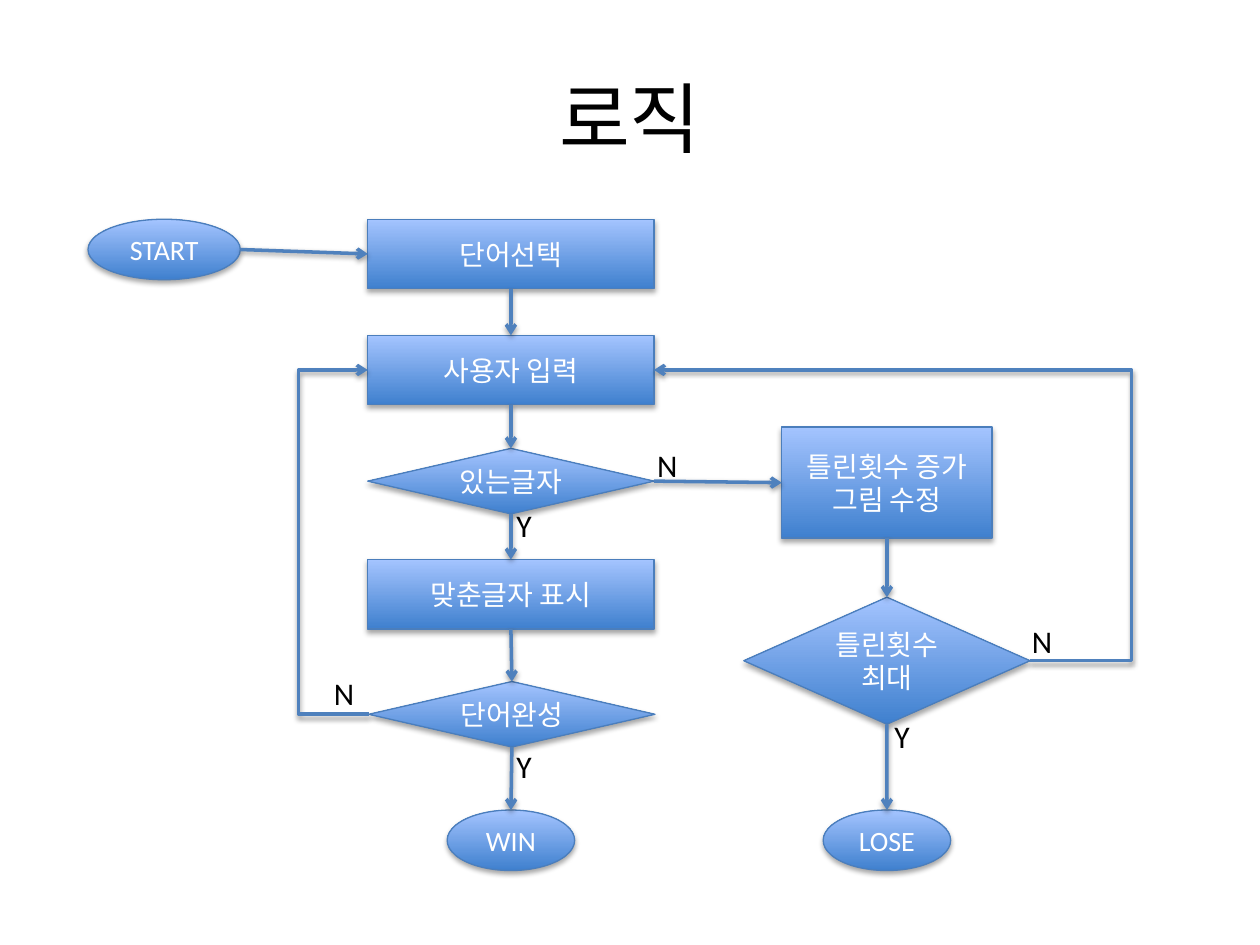
from lxml import etree
from pptx import Presentation
from pptx.dml.color import RGBColor
from pptx.enum.shapes import MSO_CONNECTOR as CONN, MSO_SHAPE as SHAPE
from pptx.enum.text import MSO_ANCHOR as ANCHOR, MSO_AUTO_SIZE as AUTO, PP_ALIGN as ALIGN
from pptx.oxml.ns import qn
from pptx.util import Cm, Pt

COLORS = {
    "text": "000000", "node_text": "FFFFFF", "dark": "3F80CE", "light": "A4C4FF",
    "outline": "4B7EBC", "arrow": "4F81BD", "shadow": "000000",
}
FONT = "Calibri"
TITLE = "로직"

MAIN, SIDE = 10.3, 17.88
TOP, LEFT, BOTTOM, RIGHT = range(4)

# name: shape, centre x, top, width, height, lines
NODES = {
    "pick": (SHAPE.RECTANGLE, MAIN, 4.42, 5.77, 1.4, ["단어선택"]),
    "input": (SHAPE.RECTANGLE, MAIN, 6.76, 5.77, 1.4, ["사용자 입력"]),
    "hit": (SHAPE.DIAMOND, MAIN, 9.04, 5.77, 1.32, ["있는글자"]),
    "miss": (SHAPE.RECTANGLE, SIDE, 8.61, 4.24, 2.24, ["틀린횟수 증가", "그림 수정"]),
    "reveal": (SHAPE.RECTANGLE, MAIN, 11.28, 5.77, 1.4, ["맞춘글자 표시"]),
    "done": (SHAPE.DIAMOND, MAIN + 0.02, 13.74, 5.77, 1.32, ["단어완성"]),
    "win": (SHAPE.OVAL, MAIN, 16.33, 2.57, 1.22, ["WIN"]),
    "max": (SHAPE.DIAMOND, SIDE, 12.04, 5.77, 2.56, ["틀린횟수", "최대"]),
    "lose": (SHAPE.OVAL, SIDE, 16.33, 2.57, 1.22, ["LOSE"]),
    "start": (SHAPE.OVAL, 3.31, 4.42, 3.07, 1.22, ["START"]),
}
ARROWS = [
    ("pick", BOTTOM, "input", TOP),
    ("input", BOTTOM, "hit", TOP),
    ("hit", BOTTOM, "reveal", TOP),
    ("reveal", BOTTOM, "done", TOP),
    ("done", BOTTOM, "win", TOP),
    ("hit", RIGHT, "miss", LEFT),
    ("miss", BOTTOM, "max", TOP),
    ("max", BOTTOM, "lose", TOP),
]
LOOPS = [
    ("done", LEFT, "input", LEFT, 6.02),
    ("max", RIGHT, "input", RIGHT, 22.81),
]
LABELS = [
    ("N", 13.0, 8.86), ("Y", 10.16, 10.08), ("Y", 10.16, 14.94),
    ("N", 6.48, 13.46), ("N", 20.55, 12.42), ("Y", 17.78, 14.33),
]
LABEL_WIDTHS = {"N": 0.91, "Y": 0.84}


def rgb(name):
    return RGBColor.from_string(COLORS[name])


def write(tf, lines, size, color, align):
    for i, line in enumerate(lines):
        p = tf.paragraphs[0] if i == 0 else tf.add_paragraph()
        p.alignment = align
        r = p.add_run()
        r.text = line
        r.font.size = Pt(size)
        r.font.name = FONT
        r.font.color.rgb = rgb(color)


def add_shadow(sp, dist, alpha):
    effects = etree.SubElement(sp._element.spPr, qn("a:effectLst"))
    shadow = etree.SubElement(effects, qn("a:outerShdw"), blurRad=str(Pt(3.1)),
                              dist=str(Pt(dist)), dir="5400000", rotWithShape="0")
    color = etree.SubElement(shadow, qn("a:srgbClr"), val=COLORS["shadow"])
    etree.SubElement(color, qn("a:alpha"), val=str(alpha * 1000))


def add_node(shapes, kind, cx, top, width, height, lines):
    sp = shapes.add_shape(kind, Cm(cx - width / 2), Cm(top), Cm(width), Cm(height))
    sp.fill.gradient()
    sp.fill.gradient_angle = 90
    for stop, name in zip(sp.fill.gradient_stops, ("dark", "light")):
        stop.color.rgb = rgb(name)
    sp.line.color.rgb = rgb("outline")
    sp.line.width = Pt(0.75)
    add_shadow(sp, 1.8, 35)
    tf = sp.text_frame
    tf.word_wrap = True
    tf.vertical_anchor = ANCHOR.MIDDLE
    write(tf, lines, 16, "node_text", ALIGN.CENTER)
    return sp


def add_arrow(shapes, kind, x=0, y=0):
    c = shapes.add_connector(kind, x, y, x, y)
    c.line.color.rgb = rgb("arrow")
    c.line.width = Pt(2)
    etree.SubElement(c.line._get_or_add_ln(), qn("a:tailEnd"), type="arrow")
    add_shadow(c, 1.6, 38)
    return c


def bend(c, x):
    ratio = (c.begin_x - Cm(x)) / (c.begin_x - c.end_x)
    guides = c._element.spPr.find(qn("a:prstGeom")).get_or_add_avLst()
    etree.SubElement(guides, qn("a:gd"), name="adj1", fmla=f"val {round(ratio * 100000)}")


def add_text(shapes, x, y, width, height):
    return shapes.add_textbox(Cm(x), Cm(y), Cm(width), Cm(height)).text_frame


def main():
    prs = Presentation()
    prs.slide_width, prs.slide_height = Cm(25.4), Cm(19.05)
    shapes = prs.slides.add_slide(prs.slide_layouts[6]).shapes

    tf = add_text(shapes, 1.27, 0.76, 22.86, 3.18)
    tf.word_wrap = True
    tf.vertical_anchor = ANCHOR.MIDDLE
    write(tf, [TITLE], 44, "text", ALIGN.CENTER)

    nodes = {name: add_node(shapes, *node) for name, node in NODES.items()}

    for src, out, dst, into in ARROWS:
        c = add_arrow(shapes, CONN.STRAIGHT)
        c.begin_connect(nodes[src], out)
        c.end_connect(nodes[dst], into)

    for src, out, dst, into, x in LOOPS:
        c = add_arrow(shapes, CONN.ELBOW)
        c.begin_connect(nodes[src], out)
        c.end_connect(nodes[dst], into)
        bend(c, x)

    start = nodes["start"]
    c = add_arrow(shapes, CONN.STRAIGHT, start.left + start.width,
                  start.top + start.height // 2)
    c.end_connect(nodes["pick"], LEFT)

    for text, x, y in LABELS:
        tf = add_text(shapes, x, y, LABEL_WIDTHS[text], 1.02)
        tf.word_wrap = False
        tf.auto_size = AUTO.SHAPE_TO_FIT_TEXT
        write(tf, [text], 18, "text", ALIGN.LEFT)

    prs.save("out.pptx")


if __name__ == "__main__":
    main()
